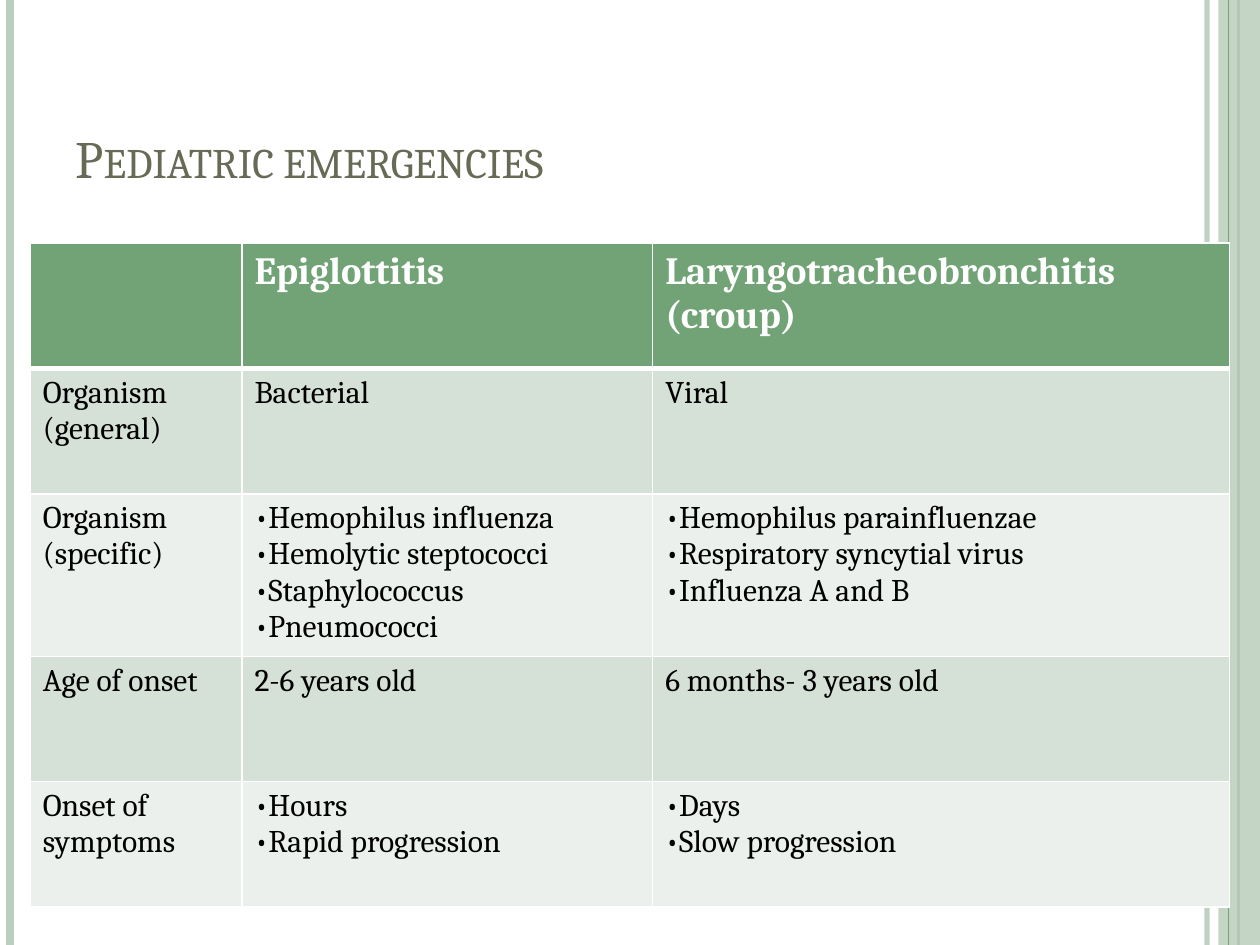
from lxml import etree
from pptx import Presentation
from pptx import util as u
from pptx.dml.color import RGBColor
from pptx.enum import shapes, text
from pptx.oxml.ns import qn

FONT = "Cambria"
GREEN, PALE, WHITE = "72A376", "BCCEBD", "FFFFFF"
BANDS = ["D5E0D6", "EBF0EC"]
COLS = [1.68, 3.26, 4.58]
HIGH, TALL = 5.27, 1.29
ROW = (HIGH - TALL) / 4
ROWS = [ROW, ROW, TALL, ROW, ROW]

# Each cell is a list of paragraphs; a leading bullet marks a list item.
CELLS = [
    [[], ["Epiglottitis"], ["Laryngotracheobronchitis (croup)"]],
    [["Organism", "(general)"], ["Bacterial"], ["Viral"]],
    [["Organism", "(specific)"],
     ["•Hemophilus influenza", "•Hemolytic steptococci",
      "•Staphylococcus", "•Pneumococci"],
     ["•Hemophilus parainfluenzae", "•Respiratory syncytial virus",
      "•Influenza A and B"]],
    [["Age of onset"], ["2-6 years old"], ["6 months- 3 years old"]],
    [["Onset of symptoms"], ["•Hours", "•Rapid progression"],
     ["•Days", "•Slow progression"]],
]


def paint(fill, color):
    fill.solid()
    fill.fore_color.rgb = RGBColor.from_string(color)


def fade(shape, alpha):
    """Set the opacity, in percent, of the shape's first colour."""
    clr = next(shape._element.spPr.iter(qn("a:srgbClr")))
    etree.SubElement(clr, qn("a:alpha")).set("val", str(alpha * 1000))


def dot(par):
    """Give the paragraph a bullet in the text font, with no indent."""
    props = par._p.get_or_add_pPr()
    props.set("marL", "0")
    props.set("indent", "0")
    etree.SubElement(props, qn("a:buFont"), typeface=FONT)
    etree.SubElement(props, qn("a:buChar"), char="•")


def write(par, words, size=18, color="000000", bold=False, caps=False):
    par.alignment = text.PP_ALIGN.LEFT
    if words.startswith("•"):
        dot(par)
    run = par.add_run()
    run.text = words.lstrip("•")
    font = run.font
    font.name, font.size, font.bold = FONT, u.Pt(size), bold
    font.color.rgb = RGBColor.from_string(color)
    if caps:
        run._r.get_or_add_rPr().set("cap", "small")


def add_rule(slide, x, color, width, alpha=100):
    """Draw a vertical line over the full slide height."""
    rule = slide.shapes.add_connector(
        shapes.MSO_CONNECTOR.STRAIGHT,
        u.Inches(x), 0, u.Inches(x), u.Inches(7.5))
    rule.line.width = u.Pt(width)
    paint(rule.line.fill, color)
    if alpha < 100:
        fade(rule, alpha)
    etree.SubElement(rule._element.spPr, qn("a:effectLst"))


def add_band(slide):
    band = slide.shapes.add_shape(
        shapes.MSO_SHAPE.RECTANGLE,
        u.Inches(9.67), 0, u.Inches(0.33), u.Inches(7.5))
    band.shadow.inherit = False
    paint(band.fill, PALE)
    band.line.fill.background()
    fade(band, 87)


def add_title(slide):
    title = slide.shapes.title
    title.left, title.top = u.Inches(0.5), u.Inches(0.3)
    title.width, title.height = u.Inches(8.17), u.Inches(1.25)
    frame = title.text_frame
    frame.auto_size = text.MSO_AUTO_SIZE.NONE
    frame.vertical_anchor = text.MSO_ANCHOR.BOTTOM
    write(frame.paragraphs[0], "Pediatric emergencies",
          size=30, color="676A55", caps=True)


def edge(cell, side, width):
    props = cell._tc.get_or_add_tcPr()
    line = etree.SubElement(props, qn("a:ln" + side), w=str(u.Pt(width)))
    fill = etree.SubElement(line, qn("a:solidFill"))
    etree.SubElement(fill, qn("a:srgbClr"), val=WHITE)


def fill_cell(cell, lines, row):
    head = row == 0
    for side in "LRTB":
        thick = (head and side == "B") or (row == 1 and side == "T")
        edge(cell, side, 3 if thick else 1)
    paint(cell.fill, GREEN if head else BANDS[(row - 1) % 2])
    look = dict(size=22, color=WHITE, bold=True) if head else {}
    frame = cell.text_frame
    for i, words in enumerate(lines):
        par = frame.add_paragraph() if i else frame.paragraphs[0]
        write(par, words, **look)


def add_grid(slide):
    grid = slide.shapes.add_table(
        len(ROWS), len(COLS), u.Inches(0.24), u.Inches(1.93),
        u.Inches(sum(COLS)), u.Inches(HIGH)).table
    for col, width in zip(grid.columns, COLS):
        col.width = u.Inches(width)
    for r, height in enumerate(ROWS):
        grid.rows[r].height = u.Inches(height)
        for c, lines in enumerate(CELLS[r]):
            fill_cell(grid.cell(r, c), lines, r)


def main():
    deck = Presentation()
    deck.slide_width, deck.slide_height = u.Inches(10), u.Inches(7.5)
    slide = deck.slides.add_slide(deck.slide_layouts[5])
    paint(slide.background.fill, WHITE)
    add_rule(slide, 9.58, PALE, 3, alpha=93)
    add_rule(slide, 0.08, PALE, 4.5)
    add_rule(slide, 9.83, GREEN, 1.5)
    add_band(slide)
    add_rule(slide, 9.75, GREEN, 0.75)
    add_title(slide)
    add_grid(slide)
    deck.save("out.pptx")


if __name__ == "__main__":
    main()
